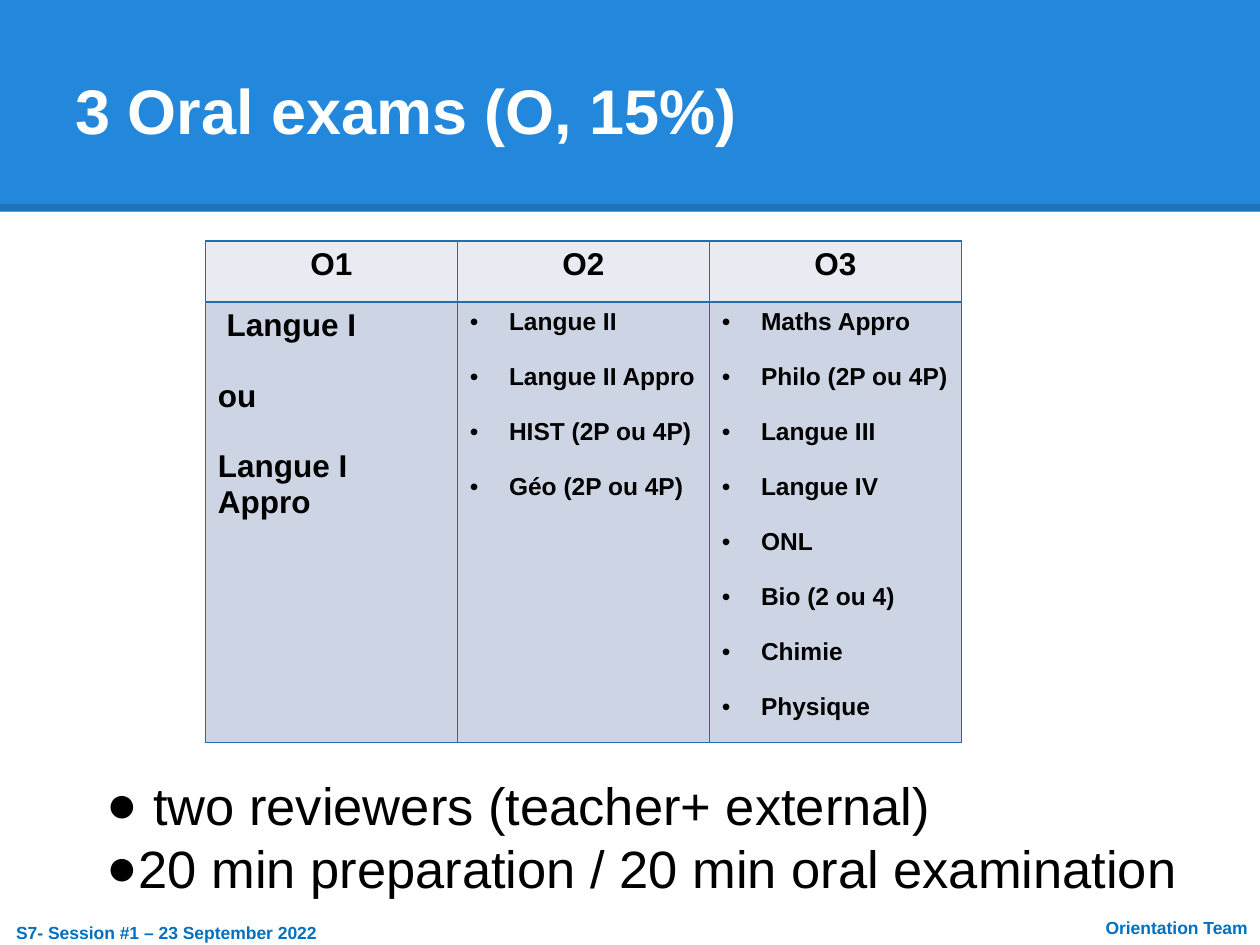
from collections import namedtuple

from lxml import etree
from pptx import Presentation
from pptx import util as u
from pptx.dml.color import RGBColor
from pptx.enum import shapes, text
from pptx.oxml import ns

WHITE = RGBColor(0xFF, 0xFF, 0xFF)
BLACK = RGBColor(0, 0, 0)
BANNER_BLUE = RGBColor(0x23, 0x88, 0xDB)
FOOTER_BLUE = RGBColor(0x00, 0x70, 0xC0)
BORDER_BLUE = RGBColor(0x1D, 0x6F, 0xB2)
HEADER_FILL = RGBColor(0xE8, 0xEB, 0xF2)
BODY_FILL = RGBColor(0xCD, 0xD5, 0xE4)

WIDTH, HEIGHT = u.Inches(10), u.Inches(7.5)
LEFT, CENTER, RIGHT = text.PP_ALIGN.LEFT, text.PP_ALIGN.CENTER, text.PP_ALIGN.RIGHT

Box = namedtuple("Box", "left top width height")

EXAMS = {
    "O1": [" Langue I", "ou", "Langue I Appro"],
    "O2": ["Langue II", "Langue II Appro", "HIST (2P ou 4P)", "Géo (2P ou 4P)"],
    "O3": ["Maths Appro", "Philo (2P ou 4P)", "Langue III", "Langue IV",
           "ONL", "Bio (2 ou 4)", "Chimie", "Physique"],
}
NOTES = [" two reviewers (teacher+ external)",
         "20 min preparation / 20 min oral examination"]


def share(left, top, width, height):
    """Turn percentages of the slide's size into a box of lengths."""
    return Box(int(WIDTH * left / 100), int(HEIGHT * top / 100),
               int(WIDTH * width / 100), int(HEIGHT * height / 100))


def add_child(parent, tag, **attributes):
    return etree.SubElement(parent, ns.qn(tag), attributes)


def set_bullet(para, mark, margin, hanging):
    props = para._p.get_or_add_pPr()
    props.set("marL", str(u.Inches(margin)))
    props.set("indent", str(-u.Inches(hanging)))
    add_child(props, "a:buFont", typeface="Arial")
    add_child(props, "a:buChar", char=mark)


def write_lines(frame, lines, align=LEFT, gap=0, bullet=None, color=BLACK, **font):
    """Write one paragraph per line, with a gap in points between them."""
    for index, line in enumerate(lines):
        para = frame.paragraphs[0] if index == 0 else frame.add_paragraph()
        para.alignment = align
        if index < len(lines) - 1:
            para.space_after = u.Pt(gap)
        if bullet:
            set_bullet(para, *bullet)
        span = para.add_run()
        span.text = line
        span.font.color.rgb = color
        for name, value in {"name": "Arial", **font}.items():
            setattr(span.font, name, value)


def add_text(page, box, lines, frame_format=None, **style):
    frame = page.shapes.add_textbox(*box).text_frame
    for name, value in {"word_wrap": True, **(frame_format or {})}.items():
        setattr(frame, name, value)
    write_lines(frame, lines, **style)


def add_banner(page, box, title):
    band = page.shapes.add_shape(shapes.MSO_SHAPE.RECTANGLE, *box)
    band.shadow.inherit = False
    band.fill.solid()
    band.fill.fore_color.rgb = BANNER_BLUE
    band.line.fill.background()

    edge_width = u.Pt(4.5)
    edge_top = box.top + box.height - edge_width // 2
    edge = page.shapes.add_connector(shapes.MSO_CONNECTOR.STRAIGHT, box.left,
                                     edge_top, box.left + box.width, edge_top)
    edge.line.width = edge_width
    edge.line.color.rgb = BLACK
    add_child(edge._element.spPr, "a:effectLst")
    tint = edge._element.spPr.find(".//" + ns.qn("a:srgbClr"))
    add_child(tint, "a:alpha", val="15000")

    margin = box.width // 20
    title_box = Box(box.left + margin, box.top, box.width - 2 * margin,
                    int(box.height * 0.755))
    inset = u.Inches(0.1)
    add_text(page, title_box, [title],
             {"vertical_anchor": text.MSO_ANCHOR.BOTTOM, "margin_bottom": inset},
             size=u.Pt(36), bold=True, color=WHITE)


def style_cell(cell, fill):
    props = cell._tc.get_or_add_tcPr()
    for side in ("a:lnL", "a:lnR", "a:lnT", "a:lnB"):
        border = add_child(props, side, w=str(u.Pt(1)))
        paint = add_child(border, "a:solidFill")
        add_child(paint, "a:srgbClr", val=str(BORDER_BLUE))
    cell.fill.solid()
    cell.fill.fore_color.rgb = fill


def add_exam_table(page, box, exams):
    table = page.shapes.add_table(2, len(exams), *box).table
    header_height = box.height // 8
    table.rows[0].height = header_height
    table.rows[1].height = box.height - header_height
    large = {"size": u.Pt(18), "gap": 20.15}
    bulleted = {"size": u.Pt(14), "gap": 15.7, "bullet": ("•", 0.31, 0.31)}
    for column, (name, subjects) in enumerate(exams.items()):
        header, body = table.cell(0, column), table.cell(1, column)
        style_cell(header, HEADER_FILL)
        style_cell(body, BODY_FILL)
        write_lines(header.text_frame, [name], align=CENTER, size=u.Pt(18), bold=True)
        write_lines(body.text_frame, subjects, bold=True,
                    **(bulleted if column else large))


def add_notes(page, box, lines):
    add_text(page, box, lines, size=u.Pt(30), bullet=("●", 0.5, 0.25))


def add_footer(page, box, line, align):
    add_text(page, box, [line], align=align, size=u.Pt(10), bold=True,
             color=FOOTER_BLUE)


def main():
    deck = Presentation()
    deck.slide_width, deck.slide_height = WIDTH, HEIGHT
    page = deck.slides.add_slide(deck.slide_layouts[6])
    add_banner(page, share(0, 0, 100, 22.4), "3 Oral exams (O, 15%)")
    add_exam_table(page, share(16.3, 25.5, 60, 51.6), EXAMS)
    add_notes(page, share(5, 81.1, 90, 14), NOTES)
    add_footer(page, share(0.3, 96.9, 34.3, 3.6),
               "S7- Session #1 – 23 September 2022", LEFT)
    add_footer(page, share(84.7, 96.4, 15.3, 3.6), "Orientation Team", RIGHT)
    deck.save("out.pptx")


if __name__ == "__main__":
    main()
